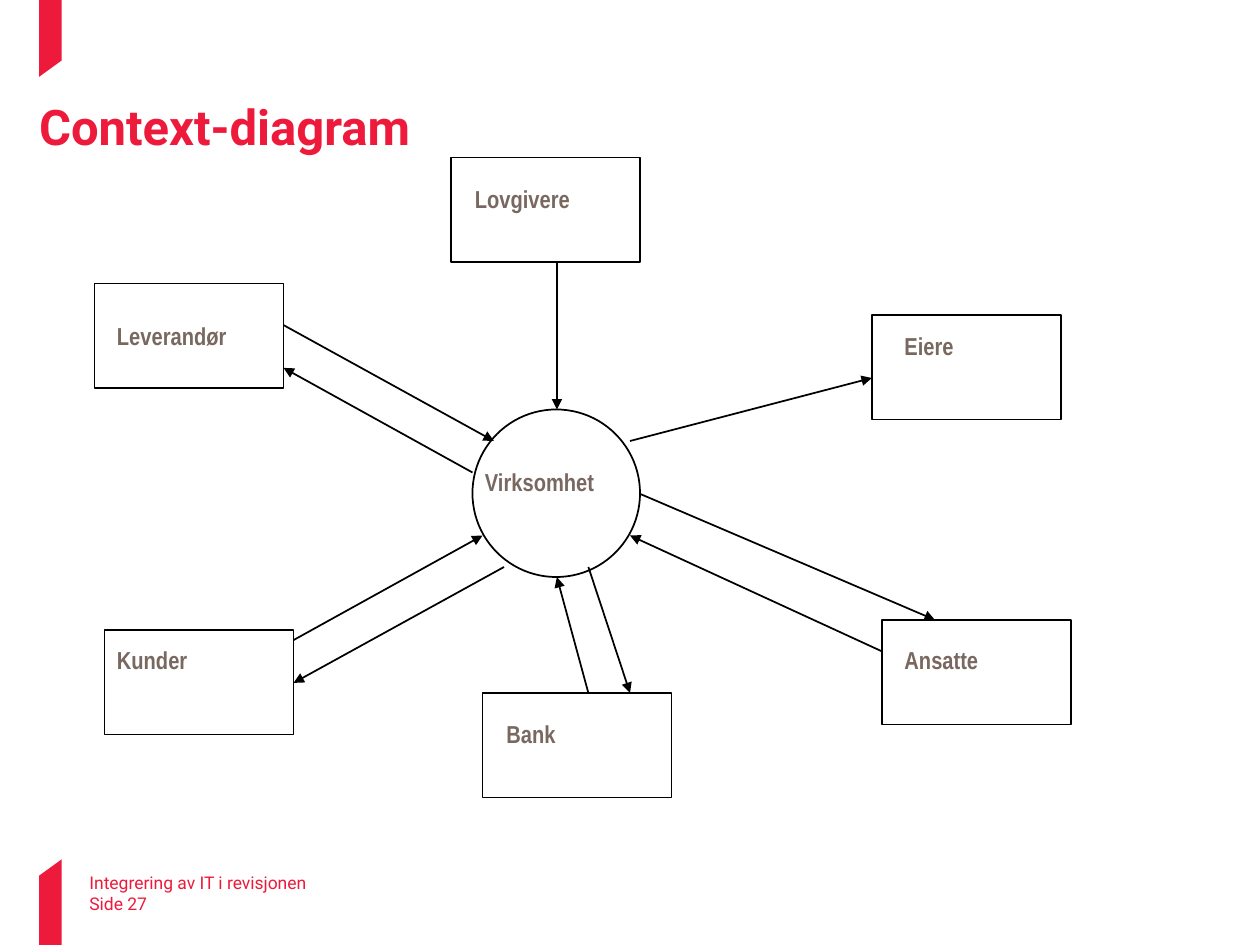
from pptx import Presentation
from pptx.dml.color import RGBColor
from pptx.enum.shapes import MSO_CONNECTOR, MSO_SHAPE
from pptx.enum.text import MSO_ANCHOR, MSO_AUTO_SIZE, PP_ALIGN
from pptx.oxml.ns import qn
from pptx.util import Inches, Pt
from lxml.etree import SubElement

COLORS = {"red": "ED1A3B", "label": "786860", "line": "000000"}


def style_text(frame, text, size, font, color, bold=False):
    frame.text = text
    paragraph = frame.paragraphs[0]
    paragraph.alignment = PP_ALIGN.LEFT
    paragraph.font.size = Pt(size)
    paragraph.font.name = font
    paragraph.font.bold = bold
    paragraph.font.color.rgb = RGBColor.from_string(COLORS[color])
    return paragraph


def clear_margins(frame):
    frame.margin_left = frame.margin_right = 0
    frame.margin_top = frame.margin_bottom = 0
    frame.vertical_anchor = MSO_ANCHOR.TOP
    frame.word_wrap = True
    frame.auto_size = MSO_AUTO_SIZE.NONE


prs = Presentation()
prs.slide_width, prs.slide_height = Inches(10), Inches(7.5)
slide = prs.slides.add_slide(prs.slide_layouts[5])
shapes = slide.shapes

ribbons = [
    [(0.49, 0.48), (0.49, 0), (0.31, 0), (0.31, 0.61)],
    [(0.31, 6.95), (0.31, 7.5), (0.49, 7.5), (0.49, 6.82)],
]
for corners in ribbons:
    points = [(Inches(x), Inches(y)) for x, y in corners]
    builder = shapes.build_freeform(*points[0])
    builder.add_line_segments(points[1:], close=True)
    ribbon = builder.convert_to_shape()
    ribbon.shadow.inherit = False
    ribbon.fill.solid()
    ribbon.fill.fore_color.rgb = RGBColor.from_string(COLORS["red"])
    ribbon.line.fill.background()

title = shapes.title
title.left, title.top = Inches(0.31), Inches(0.74)
title.width, title.height = Inches(9.37), Inches(1.06)
clear_margins(title.text_frame)
heading = style_text(title.text_frame, "Context-diagram", 28, "Roboto", "red", True)
heading.line_spacing = 1.05

footers = [("Integrering av IT i revisjonen", 6.92, 7.32), ("Side 27", 7.09, 2.33)]
for text, top, width in footers:
    footer = shapes.add_textbox(Inches(0.71), Inches(top), Inches(width), Inches(0.18))
    clear_margins(footer.text_frame)
    style_text(footer.text_frame, text, 10, "Roboto", "red")

BOX = (MSO_SHAPE.RECTANGLE, 1.5, 0.83)
CIRCLE = (MSO_SHAPE.OVAL, 1.33, 1.33)
parties = [
    ("Virksomhet", CIRCLE, 3.75, 3.25, 3.75, 3.66, 1.08),
    ("Kunder", BOX, 0.83, 5, 0.83, 5.07, 0.76),
    ("Lovgivere", BOX, 3.58, 1.25, 3.67, 1.41, 0.96),
    ("Bank", BOX, 3.83, 5.5, 3.92, 5.66, 0.59),
    ("Leverandør", BOX, 0.75, 2.25, 0.83, 2.5, 1.08),
    ("Ansatte", BOX, 7, 4.92, 7.08, 5.07, 0.79),
    ("Eiere", BOX, 6.92, 2.5, 7.08, 2.58, 0.6),
]
for name, (outline, width, height), left, top, label_left, label_top, label_width in parties:
    party = shapes.add_shape(outline, Inches(left), Inches(top), Inches(width), Inches(height))
    party.shadow.inherit = False
    party.fill.background()
    party.line.color.rgb = RGBColor.from_string(COLORS["line"])
    party.line.width = Pt(1)

    label = shapes.add_textbox(
        Inches(label_left), Inches(label_top), Inches(label_width), Inches(0.34)
    )
    label.text_frame.word_wrap = False
    label.text_frame.auto_size = MSO_AUTO_SIZE.SHAPE_TO_FIT_TEXT
    style_text(label.text_frame, name, 14, "Arial Narrow", "label", True)

flows = [
    (4.42, 2.08, 4.42, 3.25),
    (3.75, 3.75, 2.25, 2.92),
    (2.25, 2.58, 3.92, 3.5),
    (2.33, 5.08, 3.83, 4.25),
    (4, 4.5, 2.33, 5.42),
    (4.67, 5.5, 4.42, 4.58),
    (4.67, 4.5, 5, 5.5),
    (7, 5.17, 5, 4.25),
    (5.08, 3.92, 7.42, 4.92),
    (5, 3.5, 6.92, 3),
]
for ends in flows:
    flow = shapes.add_connector(MSO_CONNECTOR.STRAIGHT, *map(Inches, ends))
    flow.line.color.rgb = RGBColor.from_string(COLORS["line"])
    flow.line.width = Pt(1)
    SubElement(flow.line._get_or_add_ln(), qn("a:tailEnd"), type="triangle")
    SubElement(flow._element.spPr, qn("a:effectLst"))

prs.save("out.pptx")
